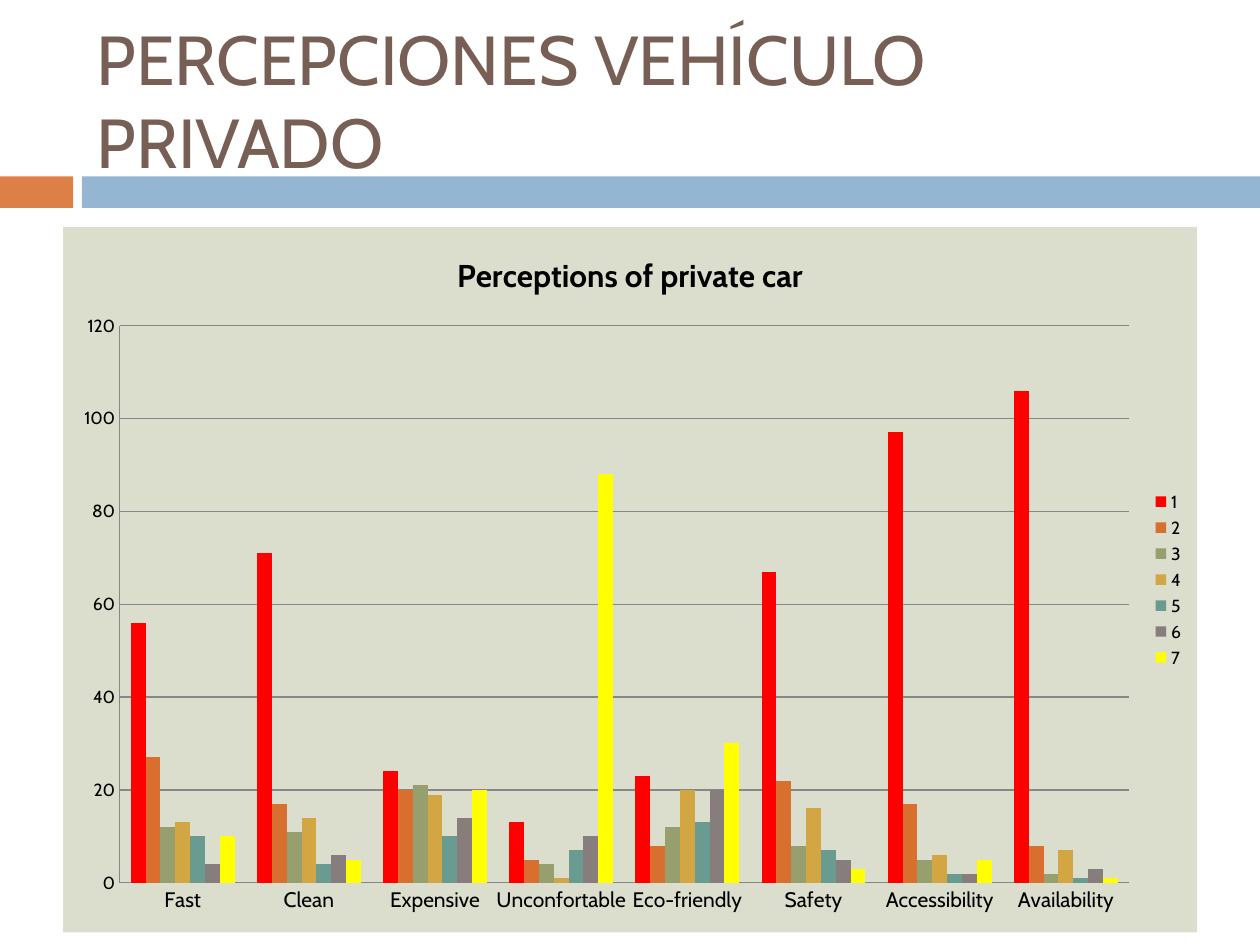
from lxml import etree
from pptx import Presentation
from pptx.chart.data import CategoryChartData
from pptx.dml.color import RGBColor
from pptx.enum import chart as ch, shapes, text
from pptx.oxml.ns import qn
from pptx.util import Inches, Pt

FONT = "Cabin"
COLORS = {"orange": "DD8047", "blue": "94B6D2", "brown": "775F55",
          "panel": "DBDDCD", "black": "000000", "grid": "878787"}
TITLE = "PERCEPCIONES VEHÍCULO PRIVADO"
CHART_TITLE = "Perceptions of private car"
BANDS = [("orange", 0, 0.58), ("blue", 0.65, 9.35)]  # colour, left, width
CATEGORIES = ["Fast", "Clean", "Expensive", "Unconfortable",
              "Eco-friendly", "Safety", "Accessibility", "Availability"]
# rating, colour, brightness, answers per category
RATINGS = [
    ("1", "FF0000", 0, (56, 71, 24, 13, 23, 67, 97, 106)),
    ("2", "DD8047", -0.1, (27, 17, 20, 5, 8, 22, 17, 8)),
    ("3", "A5AB81", -0.1, (12, 11, 21, 4, 12, 8, 5, 2)),
    ("4", "D8B25C", -0.1, (13, 14, 19, 1, 20, 16, 6, 7)),
    ("5", "7BA79D", -0.1, (10, 4, 10, 7, 13, 7, 2, 1)),
    ("6", "968C8C", -0.1, (4, 6, 14, 10, 20, 5, 2, 3)),
    ("7", "FFFF00", 0, (10, 5, 20, 88, 30, 3, 5, 1)),
]
PLOT_LAYOUT = {"x": 0.05, "y": 0.14, "w": 0.89, "h": 0.79}  # share of the chart


def rgb(name):
    return RGBColor.from_string(COLORS[name])


def style_font(font, size, color="black", bold=False):
    font.name, font.size, font.bold = FONT, Pt(size), bold
    font.color.rgb = rgb(color)


def place_plot(chart):
    """Fix the inner plot area inside the chart frame."""
    area = chart._chartSpace.chart.plotArea
    for old in area.findall(qn("c:layout")):
        area.remove(old)
    layout = etree.Element(qn("c:layout"))
    manual = etree.SubElement(layout, qn("c:manualLayout"))
    settings = {"layoutTarget": "inner", "xMode": "edge", "yMode": "edge", **PLOT_LAYOUT}
    for tag, value in settings.items():
        etree.SubElement(manual, qn(f"c:{tag}")).set("val", str(value))
    area.insert(0, layout)


def fill_chart_background(chart):
    space = chart._chartSpace
    props = etree.Element(qn("c:spPr"))
    fill = etree.SubElement(props, qn("a:solidFill"))
    etree.SubElement(fill, qn("a:srgbClr")).set("val", COLORS["panel"])
    line = etree.SubElement(props, qn("a:ln"))
    etree.SubElement(line, qn("a:noFill"))
    space.chart.addnext(props)


def add_bands(slide):
    for color, left, width in BANDS:
        band = slide.shapes.add_shape(shapes.MSO_SHAPE.RECTANGLE, Inches(left),
                                      Inches(1.4), Inches(width), Inches(0.25))
        band.shadow.inherit = False
        band.fill.solid()
        band.fill.fore_color.rgb = rgb(color)
        band.line.fill.background()


def add_title(slide):
    frame = slide.shapes.add_textbox(Inches(0.67), Inches(0.25),
                                     Inches(8.92), Inches(1.08)).text_frame
    frame.word_wrap = True
    frame.vertical_anchor = text.MSO_ANCHOR.MIDDLE
    heading = frame.paragraphs[0]
    heading.text = TITLE
    style_font(heading.font, 39.6, "brown")


def add_ratings_chart(slide):
    data = CategoryChartData()
    data.categories = CATEGORIES
    for rating, _, _, answers in RATINGS:
        data.add_series(rating, answers)
    chart = slide.shapes.add_chart(ch.XL_CHART_TYPE.COLUMN_CLUSTERED, Inches(0.5),
                                   Inches(1.8), Inches(9), Inches(5.6), data).chart
    style_font(chart.font, 10)
    fill_chart_background(chart)
    place_plot(chart)

    chart.has_title = True
    heading = chart.chart_title.text_frame.paragraphs[0]
    heading.text = CHART_TITLE
    style_font(heading.font, 18, bold=True)
    chart.chart_title.include_in_layout = False

    chart.has_legend = True
    chart.legend.position = ch.XL_LEGEND_POSITION.RIGHT
    chart.legend.include_in_layout = False

    plot = chart.plots[0]
    plot.vary_by_categories = False
    plot.gap_width, plot.overlap = 150, 0
    for series, (_, color, brightness, _) in zip(plot.series, RATINGS):
        series.format.fill.solid()
        series.format.fill.fore_color.rgb = RGBColor.from_string(color)
        if brightness:
            series.format.fill.fore_color.brightness = brightness

    values, names = chart.value_axis, chart.category_axis
    values.minimum_scale, values.maximum_scale, values.major_unit = 0, 120, 20
    values.has_major_gridlines = True
    style_font(names.tick_labels.font, 12)
    for axis in (values, names):
        axis.major_tick_mark = ch.XL_TICK_MARK.NONE
    for line in (values.format.line, names.format.line, values.major_gridlines.format.line):
        line.color.rgb = rgb("grid")
        line.width = Pt(0.75)


def main():
    deck = Presentation()
    deck.slide_width, deck.slide_height = Inches(10), Inches(7.5)
    slide = deck.slides.add_slide(deck.slide_layouts[6])
    add_bands(slide)
    add_title(slide)
    add_ratings_chart(slide)
    deck.save("out.pptx")


if __name__ == "__main__":
    main()
